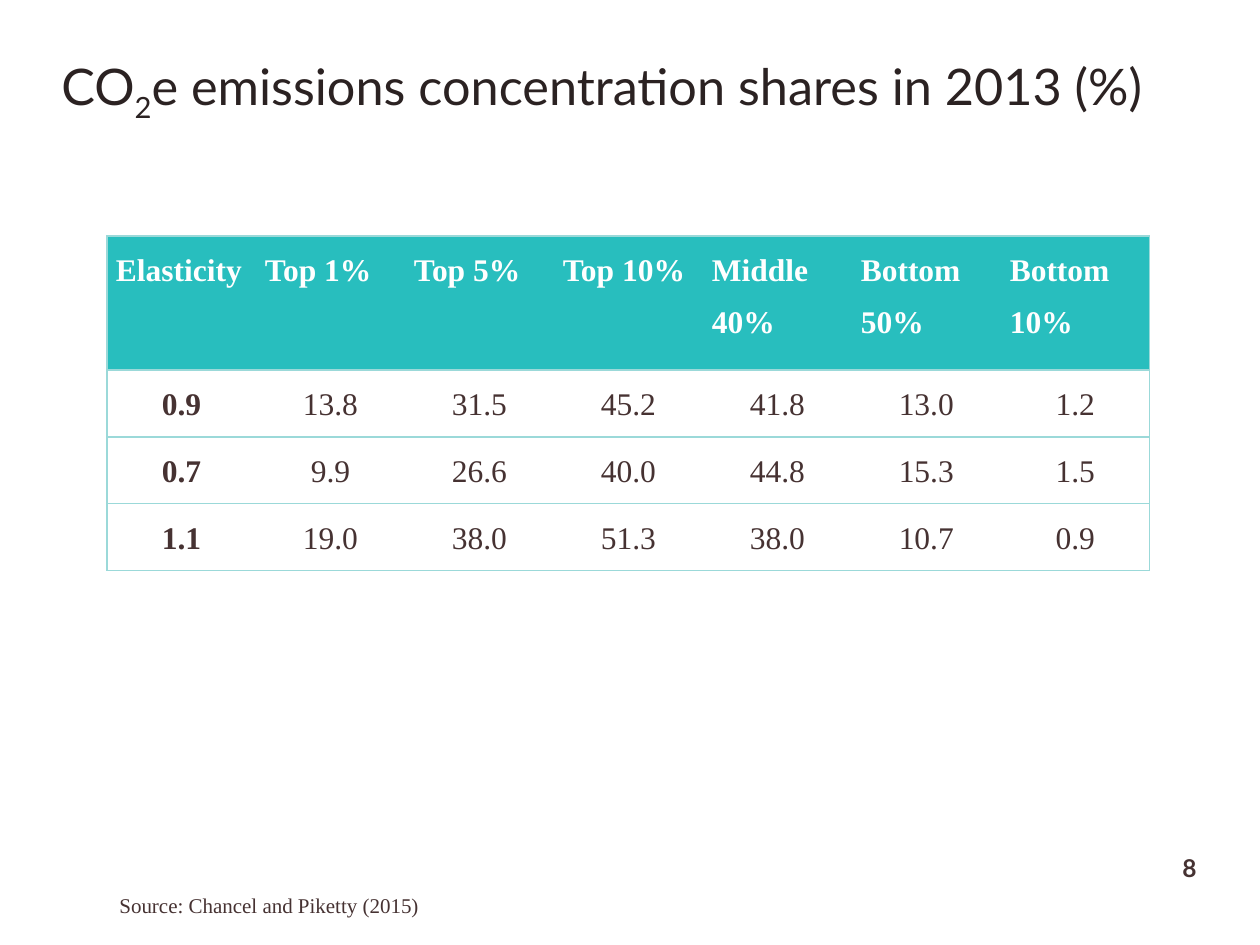
from dataclasses import dataclass

from lxml import etree
from pptx import Presentation
from pptx.dml.color import RGBColor
from pptx.enum.text import MSO_ANCHOR, PP_ALIGN
from pptx.oxml.ns import qn
from pptx.util import Emu, Pt

LEFT, CENTER, RIGHT = PP_ALIGN.LEFT, PP_ALIGN.CENTER, PP_ALIGN.RIGHT
JUSTIFY = PP_ALIGN.JUSTIFY
TOP, MIDDLE = MSO_ANCHOR.TOP, MSO_ANCHOR.MIDDLE

TITLE = [("CO", 0), ("2", -25), ("e emissions concentration shares in 2013 (%)", 0)]
NUMBER = "8"
SOURCE = "Source: Chancel and Piketty (2015)"
HEAD = ["Elasticity", "Top 1%", "Top 5%", "Top 10%",
        "Middle 40%", "Bottom 50%", "Bottom 10%"]
ROWS = [
    ["0.9", "13.8", "31.5", "45.2", "41.8", "13.0", "1.2"],
    ["0.7", "9.9", "26.6", "40.0", "44.8", "15.3", "1.5"],
    ["1.1", "19.0", "38.0", "51.3", "38.0", "10.7", "0.9"],
]


@dataclass(frozen=True)
class Theme:
    sans: str = "Lato"
    serif: str = "Times New Roman"
    title: str = "2B2222"
    ink: str = "463232"
    white: str = "FFFFFF"
    teal: str = "28BEBE"
    line: str = "9BD9D9"
    title_pt: float = 28.8
    table_pt: int = 18
    number_pt: int = 14
    source_pt: int = 12
    line_pt: float = 0.75


T = Theme()
COL_W, ROW_H, PAD = 149, 67, 9


def px(n):
    return Emu(round(n * 914400 / 126))


def add_run(para, text, font, size, color, bold=False):
    run = para.add_run()
    run.text = text
    run.font.name, run.font.size, run.font.bold = font, Pt(size), bold
    run.font.color.rgb = RGBColor.from_string(color)
    return run


def add_box(slide, x, y, w, h, align=LEFT, anchor=TOP, wrap=True):
    """Add a text box and return its first paragraph."""
    frame = slide.shapes.add_textbox(px(x), px(y), px(w), px(h)).text_frame
    frame.word_wrap, frame.vertical_anchor = wrap, anchor
    para = frame.paragraphs[0]
    para.alignment = align
    return para


def set_lines(cell, sides):
    """Draw the named sides of a cell and clear the others."""
    props = cell._tc.get_or_add_tcPr()
    for side in "LRTB":
        line = etree.SubElement(props, qn(f"a:ln{side}"), w=str(Pt(T.line_pt)))
        if side in sides:
            fill = etree.SubElement(line, qn("a:solidFill"))
            etree.SubElement(fill, qn("a:srgbClr"), val=T.line)
        else:
            etree.SubElement(line, qn("a:noFill"))


def add_grid(slide, x, y):
    data = [HEAD] + ROWS
    cols = len(HEAD)
    heights = [2 * ROW_H] + [ROW_H] * len(ROWS)
    table = slide.shapes.add_table(len(data), cols, px(x), px(y),
                                   px(cols * COL_W), px(sum(heights))).table
    table.horz_banding = False
    for col in table.columns:
        col.width = px(COL_W)
    for r, (texts, height) in enumerate(zip(data, heights)):
        table.rows[r].height = px(height)
        for c, text in enumerate(texts):
            cell, head = table.cell(r, c), r == 0
            edges = ("L" if c == 0 else "") + ("R" if c == cols - 1 else "")
            set_lines(cell, "TB" + edges)
            if head:
                cell.fill.solid()
                cell.fill.fore_color.rgb = RGBColor.from_string(T.teal)
            else:
                cell.fill.background()
            cell.margin_left = cell.margin_right = px(PAD)
            cell.margin_top = cell.margin_bottom = 0
            para = cell.text_frame.paragraphs[0]
            para.alignment = JUSTIFY if head else CENTER
            para.line_spacing = 1.5
            add_run(para, text, T.serif, T.table_pt,
                    T.white if head else T.ink, head or c == 0)


def main():
    deck = Presentation()
    deck.slide_width, deck.slide_height = px(1260), px(945)
    slide = deck.slides.add_slide(deck.slide_layouts[6])

    title = add_box(slide, 49, 49, 1160, 149)
    for text, shift in TITLE:
        run = add_run(title, text, T.sans, T.title_pt, T.title)
        if shift:
            run.font._element.set("baseline", str(shift * 1000))

    number = add_box(slide, 1150, 843, 59, 49, RIGHT, MIDDLE)
    add_run(number, NUMBER, T.sans, T.number_pt, T.ink, True)

    add_grid(slide, 107, 236)

    source = add_box(slide, 107, 885, 334, 40, JUSTIFY, wrap=False)
    source.line_spacing, source.space_after = 1.07, Pt(6)
    add_run(source, SOURCE, T.serif, T.source_pt, T.ink)

    deck.save("out.pptx")


if __name__ == "__main__":
    main()
